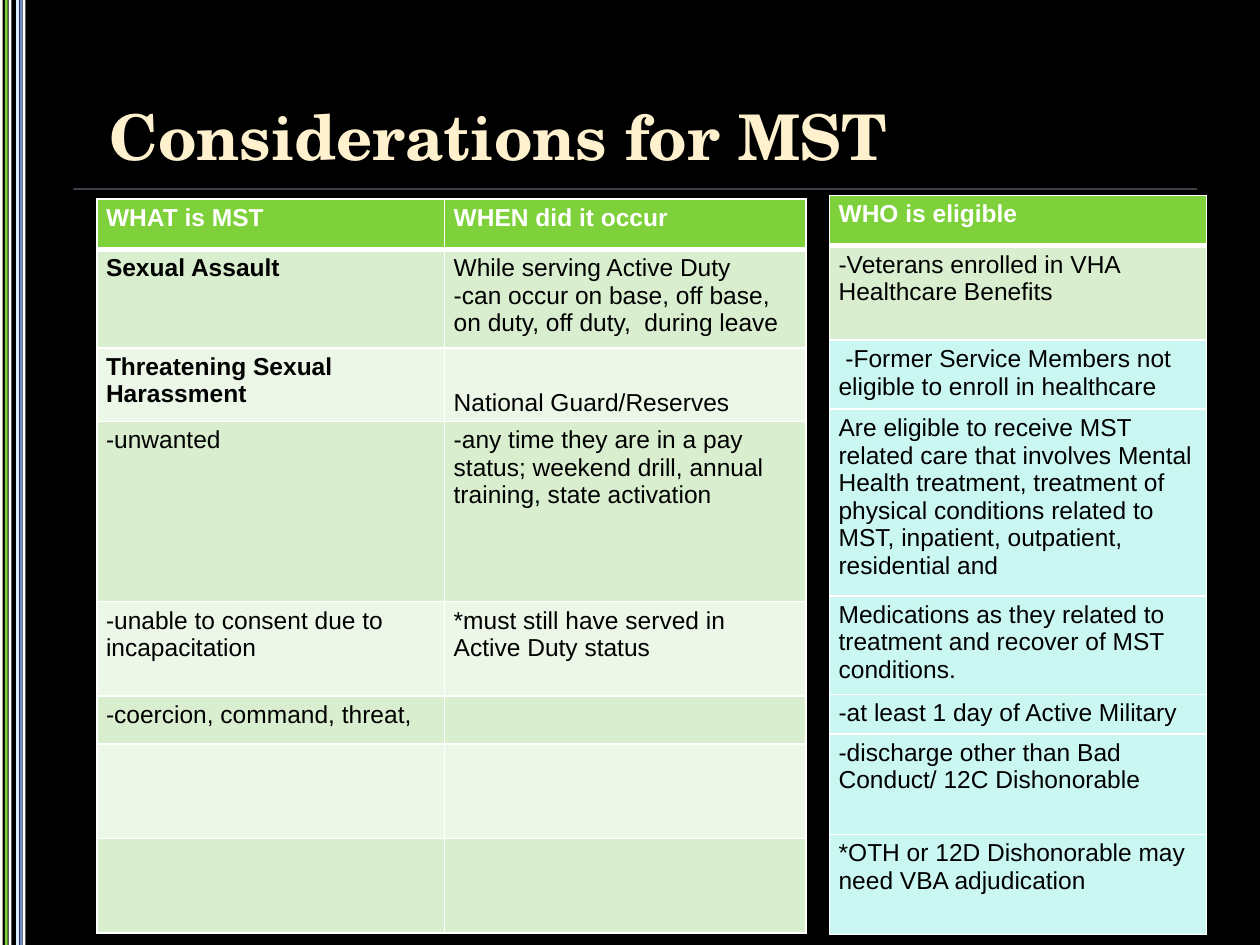
from dataclasses import dataclass
from lxml.etree import SubElement
from pptx import Presentation
from pptx.dml.color import RGBColor
from pptx.enum.shapes import MSO_CONNECTOR, MSO_SHAPE
from pptx.enum.text import MSO_ANCHOR
from pptx.oxml.ns import qn
from pptx.util import Pt


@dataclass(frozen=True)
class Theme:
    black: str = "000000"
    white: str = "FFFFFF"
    cream: str = "FFF1CE"
    green: str = "7FD13B"
    mid: str = "D8EECE"
    pale: str = "ECF7E8"
    aqua: str = "CAF7F1"
    sky: str = "D6ECFF"
    blue: str = "738AC8"
    rule: str = "C7D0E9"
    serif: str = "TeX Gyre Schola"
    sans: str = "Arial"
    head: int = 36
    body: int = 14


THEME = Theme()
STRIPES = [(0, 1.6, THEME.white), (5, 1.6, THEME.white),
           (8, 0.8, THEME.black), (9.2, 1.6, THEME.sky),
           (11.2, 1.6, THEME.blue), (13, 1.6, THEME.white),
           (2.8, 1.6, THEME.green)]
FACTS = [
    ["WHAT is MST", "WHEN did it occur"],
    ["Sexual Assault",
     "While serving Active Duty\n"
     "-can occur on base, off base, on duty, off duty,  during leave"],
    ["Threatening Sexual Harassment", "National Guard/Reserves"],
    ["-unwanted", "-any time they are in a pay status; weekend drill, "
     "annual training, state activation"],
    ["-unable to consent due to incapacitation",
     "*must still have served in Active Duty status"],
    ["-coercion, command, threat,", ""],
    ["", ""],
    ["", ""],
]
WHO = [
    ["WHO is eligible"],
    ["-Veterans enrolled in VHA Healthcare Benefits"],
    [" -Former Service Members not eligible to enroll in healthcare"],
    ["Are eligible to receive MST related care that involves Mental Health "
     "treatment, treatment of physical conditions related to MST, inpatient, "
     "outpatient, residential and"],
    ["Medications as they related to treatment and recover of MST conditions."],
    ["-at least 1 day of Active Military"],
    ["-discharge other than Bad Conduct/ 12C Dishonorable"],
    ["*OTH or 12D Dishonorable may need VBA adjudication"],
]


def color(code):
    return RGBColor.from_string(code)


def write(frame, text, *, size=THEME.body, font=THEME.sans,
          ink=THEME.black, bold=False):
    """Put each line of the text in its own paragraph."""
    for n, line in enumerate(text.split("\n")):
        para = frame.add_paragraph() if n else frame.paragraphs[0]
        if not line:
            continue
        run = para.add_run()
        run.text = line
        run.font.size, run.font.name, run.font.bold = Pt(size), font, bold
        run.font.color.rgb = color(ink)


def edge(cell, top, base):
    """Draw white cell borders; the side lines are 1 point wide."""
    props = cell._tc.get_or_add_tcPr()
    sides = (("L", 1), ("R", 1), ("T", top), ("B", base))
    for n, (side, width) in enumerate(sides):
        line = props.makeelement(qn(f"a:ln{side}"), {"w": str(Pt(width))})
        props.insert(n, line)
        fill = SubElement(line, qn("a:solidFill"))
        SubElement(fill, qn("a:srgbClr"), val=THEME.white)


def stripes(slide, left, top, height):
    for shift, width, ink in STRIPES:
        bar = slide.shapes.add_shape(MSO_SHAPE.RECTANGLE, Pt(left + shift),
                                     Pt(top), Pt(width), Pt(height))
        bar.shadow.inherit = False
        bar.fill.solid()
        bar.fill.fore_color.rgb = color(ink)
        bar.line.fill.background()


def title(slide, text, left, top, width, height):
    box = slide.shapes.add_textbox(Pt(left), Pt(top), Pt(width), Pt(height))
    frame = box.text_frame
    frame.word_wrap = True
    frame.vertical_anchor = MSO_ANCHOR.MIDDLE
    frame.margin_left = frame.margin_right = Pt(14.4)
    frame.margin_top = frame.margin_bottom = Pt(14.4)
    write(frame, text, size=THEME.head, font=THEME.serif,
          ink=THEME.cream, bold=True)


def rule(slide, left, top, width):
    line = slide.shapes.add_connector(MSO_CONNECTOR.STRAIGHT, Pt(left), Pt(top),
                                      Pt(left + width), Pt(top))
    line.line.width = Pt(0.5)
    line.line.color.rgb = color(THEME.rule)
    props = line._element.spPr
    SubElement(next(props.iter(qn("a:srgbClr"))), qn("a:alpha"), val="90000")
    SubElement(props, qn("a:effectLst"))


def grid(slide, rows, left, top, cols, highs, fills, strong=(), low=()):
    """Place a table; strong and low hold bold and bottom-set (row, col)."""
    frame = slide.shapes.add_table(len(rows), len(cols), Pt(left), Pt(top),
                                   Pt(sum(cols)), Pt(sum(highs)))
    table = frame.table
    for col, width in zip(table.columns, cols):
        col.width = Pt(width)
    for r, (texts, high) in enumerate(zip(rows, highs)):
        table.rows[r].height = Pt(high)
        for c, text in enumerate(texts):
            cell = table.cell(r, c)
            cell.margin_left = cell.margin_right = Pt(5.2)
            cell.margin_top = cell.margin_bottom = Pt(2.9)
            if (r, c) in low:
                cell.vertical_anchor = MSO_ANCHOR.BOTTOM
            cell.fill.solid()
            cell.fill.fore_color.rgb = color(fills[r])
            edge(cell, 3 if r == 1 else 1, 3 if r == 0 else 1)
            write(cell.text_frame, text, bold=r == 0 or (r, c) in strong,
                  ink=THEME.black if r else THEME.white)


def main():
    deck = Presentation()
    deck.slide_width, deck.slide_height = Pt(720), Pt(540)
    slide = deck.slides.add_slide(deck.slide_layouts[6])
    slide.background.fill.solid()
    slide.background.fill.fore_color.rgb = color(THEME.black)
    stripes(slide, 0, 0, 540)
    rule(slide, 42, 108, 642)
    title(slide, "Considerations for MST", 48, 21.6, 635, 111.6)
    bands = [THEME.mid, THEME.pale] * 3 + [THEME.mid]
    grid(slide, FACTS, 55.4, 113.8, [198.7, 206.6],
         [28.8, 54, 42, 103, 54, 26.2, 54, 54], [THEME.green] + bands,
         strong={(1, 0), (2, 0)}, low={(2, 1)})
    grid(slide, WHO, 474, 111.6, [215.5],
         [28.8, 54, 38, 103, 54, 21.8, 57.4, 57.4],
         [THEME.green, THEME.mid] + [THEME.aqua] * 6)
    deck.save("out.pptx")


if __name__ == "__main__":
    main()
